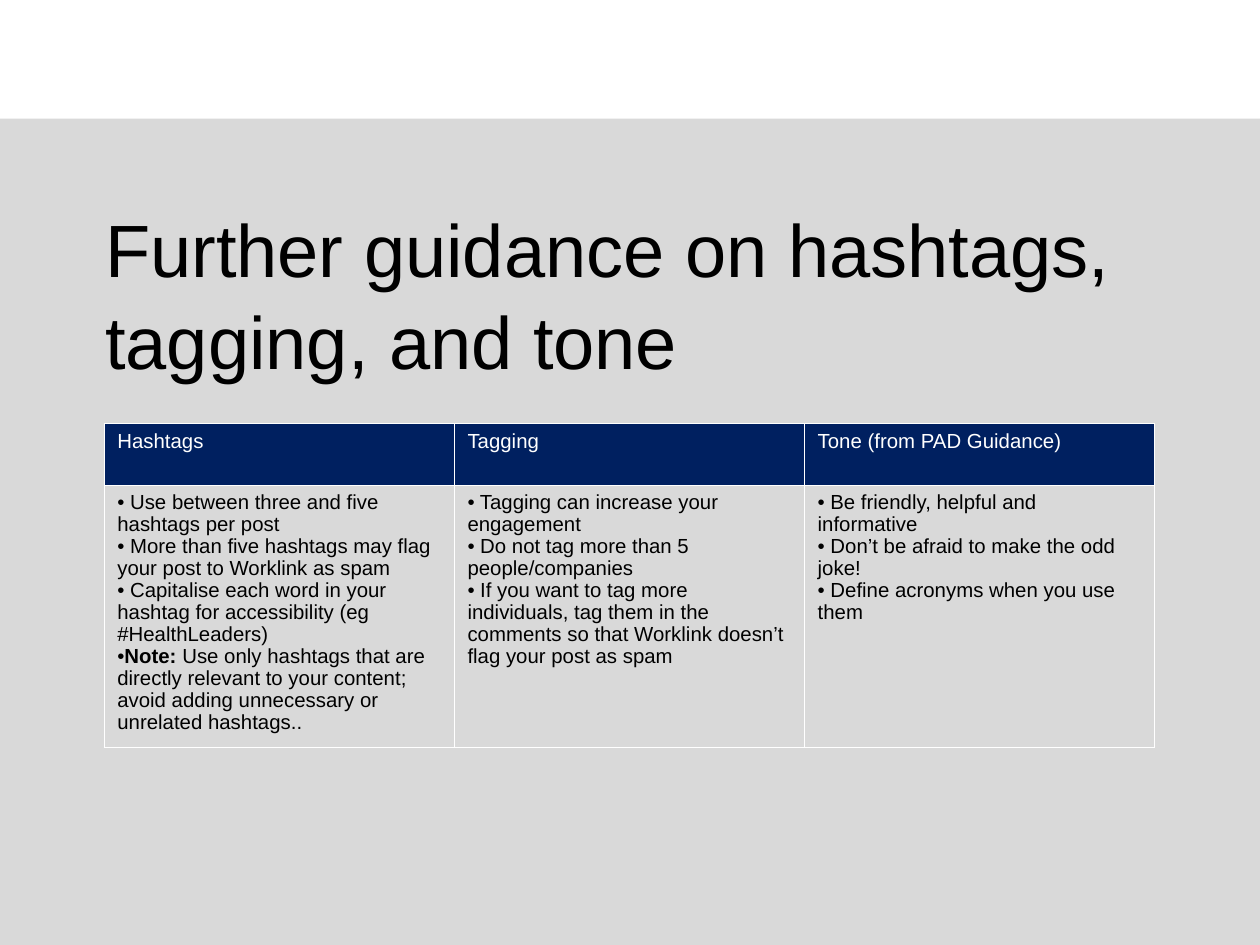
from dataclasses import dataclass

from lxml import etree
from pptx import Presentation
from pptx.dml.color import RGBColor
from pptx.enum.shapes import MSO_SHAPE
from pptx.oxml.ns import qn
from pptx.slide import Slide
from pptx.table import _Cell
from pptx.text.text import _Paragraph
from pptx.util import Inches, Pt

RECTANGLE = MSO_SHAPE.RECTANGLE
SLIDE_WIDTH, SLIDE_HEIGHT = Inches(9.45), Inches(7.09)
COLOURS = {"panel": "D9D9D9", "header": "002060", "light": "FFFFFF", "dark": "000000"}
BORDER_WIDTH = Pt(0.6)
TABLE_LINE_SPACING = 0.97


@dataclass(frozen=True)
class Area:
    """Left, top, width and height in inches."""
    left: float
    top: float
    width: float
    height: float

    def emu(self) -> tuple[int, ...]:
        return tuple(Inches(n) for n in (self.left, self.top, self.width, self.height))


@dataclass(frozen=True)
class Point:
    text: str
    lead: str = ""


@dataclass(frozen=True)
class Topic:
    heading: str
    points: tuple[Point, ...]


PANEL = Area(0, 0.89, 9.45, 6.2)
TITLE = Area(0.69, 1.41, 8.22, 1.68)
GUIDANCE = Area(0.78, 3.18, 7.88, 2.43)
HEADER_HEIGHT = 0.46

TOPICS = (
    Topic("Hashtags", (
        Point(" Use between three and five hashtags per post"),
        Point(" More than five hashtags may flag your post to Worklink as spam"),
        Point(" Capitalise each word in your hashtag for accessibility (eg #HealthLeaders)"),
        Point("Use only hashtags that are directly relevant to your content; "
              "avoid adding unnecessary or unrelated hashtags..", lead="Note: "),
    )),
    Topic("Tagging", (
        Point(" Tagging can increase your engagement"),
        Point(" Do not tag more than 5 people/companies"),
        Point(" If you want to tag more individuals, tag them in the comments "
              "so that Worklink doesn’t flag your post as spam"),
    )),
    Topic("Tone (from PAD Guidance)", (
        Point(" Be friendly, helpful and informative"),
        Point(" Don’t be afraid to make the odd joke!"),
        Point(" Define acronyms when you use them"),
    )),
)


def add_words(paragraph: _Paragraph, text: str, size: float, colour: str,
              bold: bool = False) -> None:
    run = paragraph.add_run()
    run.text = text
    font_values = {"name": "Arial", "size": Pt(size), "bold": bold}
    for attribute, value in font_values.items():
        setattr(run.font, attribute, value)
    run.font.color.rgb = RGBColor.from_string(COLOURS[colour])


def add_bullet(paragraph: _Paragraph) -> None:
    properties = paragraph._p.get_or_add_pPr()
    properties.set("marL", "0")
    properties.set("indent", "0")
    etree.SubElement(properties, qn("a:buFont"), typeface="Arial")
    etree.SubElement(properties, qn("a:buChar"), char="•")


def add_borders(cell: _Cell) -> None:
    properties = cell._tc.get_or_add_tcPr()
    for side in ("lnL", "lnR", "lnT", "lnB"):
        line = etree.SubElement(properties, qn(f"a:{side}"), w=str(BORDER_WIDTH))
        fill = etree.SubElement(line, qn("a:solidFill"))
        etree.SubElement(fill, qn("a:srgbClr"), val=COLOURS["light"])


def fill_header(cell: _Cell, heading: str) -> None:
    add_borders(cell)
    cell.fill.solid()
    cell.fill.fore_color.rgb = RGBColor.from_string(COLOURS["header"])
    paragraph = cell.text_frame.paragraphs[0]
    paragraph.line_spacing = TABLE_LINE_SPACING
    add_words(paragraph, heading, 11, "light")


def fill_points(cell: _Cell, points: tuple[Point, ...]) -> None:
    add_borders(cell)
    cell.fill.background()
    frame = cell.text_frame
    for index, point in enumerate(points):
        paragraph = frame.add_paragraph() if index else frame.paragraphs[0]
        add_bullet(paragraph)
        paragraph.line_spacing = TABLE_LINE_SPACING
        if point.lead:
            add_words(paragraph, point.lead, 11, "dark", bold=True)
        add_words(paragraph, point.text, 11, "dark")


def add_panel(slide: Slide) -> None:
    panel = slide.shapes.add_shape(RECTANGLE, *PANEL.emu())
    panel.shadow.inherit = False
    panel.fill.solid()
    panel.fill.fore_color.rgb = RGBColor.from_string(COLOURS["panel"])
    panel.line.fill.background()


def add_guidance(slide: Slide) -> None:
    guidance = slide.shapes.add_table(2, len(TOPICS), *GUIDANCE.emu()).table
    for attribute in ("first_row", "horz_banding"):
        setattr(guidance, attribute, False)
    guidance.rows[0].height = Inches(HEADER_HEIGHT)
    guidance.rows[1].height = Inches(GUIDANCE.height - HEADER_HEIGHT)
    for column, topic in enumerate(TOPICS):
        guidance.columns[column].width = Inches(GUIDANCE.width / len(TOPICS))
        fill_header(guidance.cell(0, column), topic.heading)
        fill_points(guidance.cell(1, column), topic.points)


def add_title(slide: Slide) -> None:
    frame = slide.shapes.add_textbox(*TITLE.emu()).text_frame
    frame_values = {"word_wrap": True, "margin_top": Inches(0.1)}
    for attribute, value in frame_values.items():
        setattr(frame, attribute, value)
    paragraph = frame.paragraphs[0]
    paragraph.line_spacing = 1.03
    add_words(paragraph, "Further guidance on hashtags, tagging, and tone", 40, "dark")


def main() -> None:
    deck = Presentation()
    deck.slide_width, deck.slide_height = SLIDE_WIDTH, SLIDE_HEIGHT
    slide = deck.slides.add_slide(deck.slide_layouts[6])
    # Grey panel below the white band
    add_panel(slide)
    # One column per topic
    add_guidance(slide)
    # Title above the table
    add_title(slide)
    deck.save("out.pptx")


if __name__ == "__main__":
    main()
